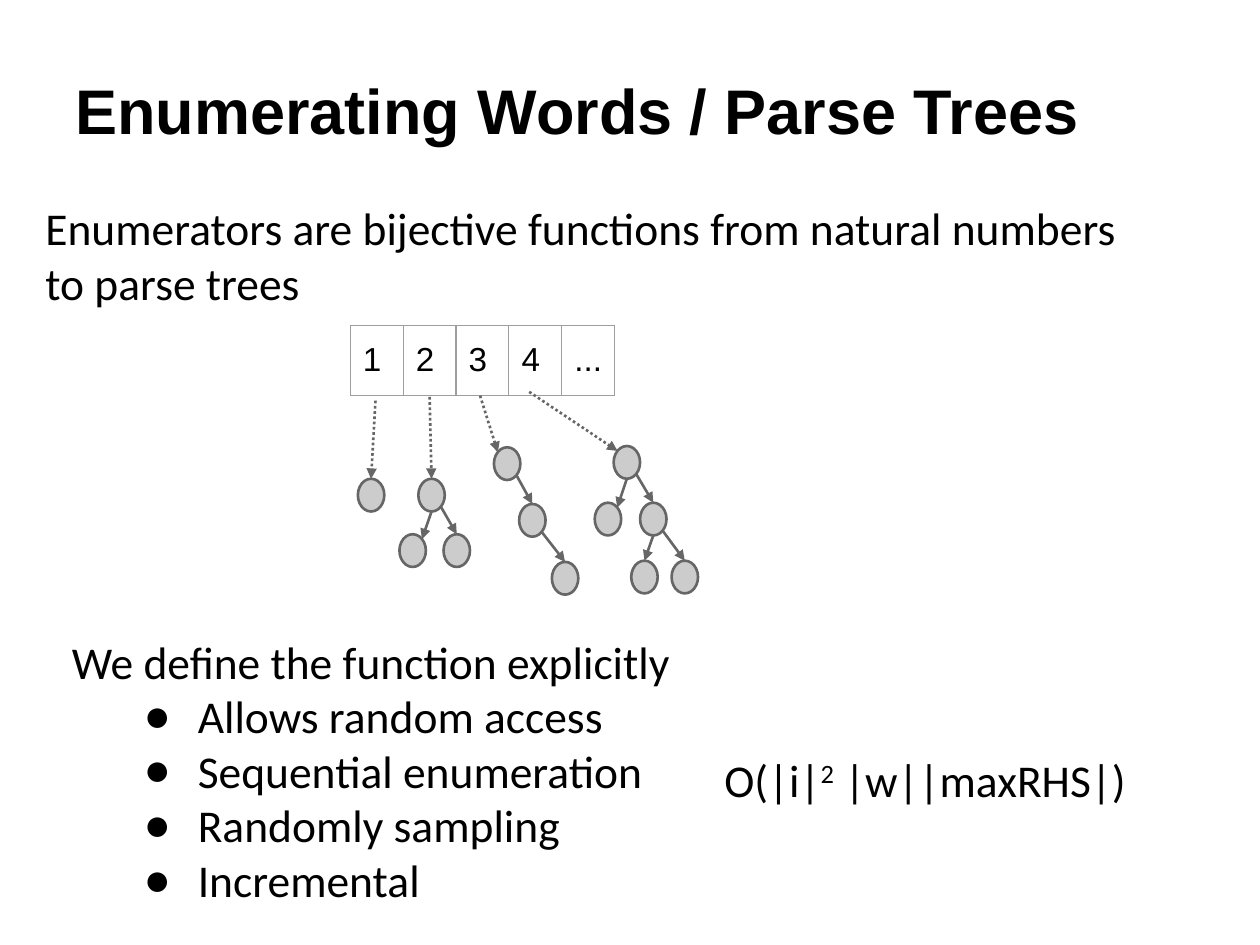
from dataclasses import dataclass

from lxml import etree
from pptx import Presentation
from pptx.dml.color import RGBColor
from pptx.enum.dml import MSO_LINE
from pptx.enum.shapes import MSO_CONNECTOR, MSO_SHAPE
from pptx.enum.text import MSO_ANCHOR, MSO_AUTO_SIZE, PP_ALIGN
from pptx.oxml.ns import qn
from pptx.util import Inches, Pt

OVAL, STRAIGHT, DOTTED = MSO_SHAPE.OVAL, MSO_CONNECTOR.STRAIGHT, MSO_LINE.ROUND_DOT
LEFT, NO_FIT = PP_ALIGN.LEFT, MSO_AUTO_SIZE.NONE
ANCHOR_TOP, ANCHOR_MIDDLE, ANCHOR_BOTTOM = MSO_ANCHOR.TOP, MSO_ANCHOR.MIDDLE, MSO_ANCHOR.BOTTOM
TWO_CONTENT = 3
COLUMNS, ROWS = 100, 75


@dataclass(frozen=True)
class Theme:
    ink: RGBColor = RGBColor(0, 0, 0)
    node: RGBColor = RGBColor(0xCC, 0xCC, 0xCC)
    edge: RGBColor = RGBColor(0x66, 0x66, 0x66)
    border: str = "9E9E9E"
    heading_font: str = "Arial"
    body_font: str = "Calibri"
    title: int = 36
    body: int = 26
    cell: int = 19
    stroke: float = 1.5
    border_stroke: float = 0.75


@dataclass(frozen=True)
class Box:
    x: float
    y: float
    w: float
    h: float

    def emu(self):
        return [cells(v) for v in (self.x, self.y, self.w, self.h)]

    def point(self, share):
        return self.x + self.w * share[0], self.y + self.h * share[1]


THEME = Theme()
NODE_W, NODE_H = 2.1, 2.6
TOP, BOTTOM = (0.5, 0), (0.5, 1)
UPPER_LEFT, UPPER_RIGHT, LOWER_RIGHT = (0.15, 0.15), (0.85, 0.15), (0.85, 0.85)
TO_LEFT, TO_RIGHT, TO_BELOW = (BOTTOM, UPPER_RIGHT), (LOWER_RIGHT, TOP), (BOTTOM, TOP)

# Each child: offset from its parent, edge sites, own children.
LEAF = []
PAIR = [((-1.5, 4.4), TO_LEFT, LEAF), ((2, 4.4), TO_RIGHT, LEAF)]
CHAIN = [((2, 4.5), TO_RIGHT, [((2.6, 4.6), TO_RIGHT, LEAF)])]
NESTED = [
    ((-1.5, 4.5), TO_LEFT, LEAF),
    ((2.1, 4.5), TO_RIGHT, [((2.5, 4.6), TO_RIGHT, LEAF), ((-0.7, 4.6), TO_BELOW, LEAF)]),
]
# Each tree: root offset, start of its pointer, pointer site, children.
FOREST = [
    ((0.6, 12.2), (2, 6), TOP, LEAF),
    ((5.4, 12.2), (6.3, 5.7), TOP, PAIR),
    ((11.4, 9.7), (10.3, 5.6), UPPER_LEFT, CHAIN),
    ((20.9, 9.6), (14.2, 5.3), UPPER_LEFT, NESTED),
]


def cells(count):
    return Inches(count / 10)


def style_runs(paragraph, size, font, bold=False):
    for run in paragraph.runs:
        run.font.size, run.font.name, run.font.bold = Pt(size), font, bold
        run.font.color.rgb = THEME.ink


def prepare_frame(shape, box, anchor):
    shape.left, shape.top, shape.width, shape.height = box.emu()
    frame = shape.text_frame
    frame.word_wrap, frame.auto_size, frame.vertical_anchor = True, NO_FIT, anchor
    frame.margin_left = frame.margin_right = frame.margin_top = frame.margin_bottom = cells(1)
    return frame


def set_bullet(paragraph, symbol=None):
    properties = paragraph._p.get_or_add_pPr()
    properties.set("marL", str(cells(10) if symbol else 0))
    properties.set("indent", str(cells(-4.3) if symbol else 0))
    if symbol:
        etree.SubElement(properties, qn("a:buChar")).set("char", symbol)
    else:
        etree.SubElement(properties, qn("a:buNone"))


def fill_title(title, box, wording):
    frame = prepare_frame(title, box, ANCHOR_BOTTOM)
    frame.text = wording
    frame.paragraphs[0].alignment = LEFT
    style_runs(frame.paragraphs[0], THEME.title, THEME.heading_font, True)


def fill_body(body, box, lead, points=()):
    frame = prepare_frame(body, box, ANCHOR_TOP)
    frame.text = "\n".join([lead, *points])
    for index, paragraph in enumerate(frame.paragraphs):
        paragraph.space_before = Pt(0)
        set_bullet(paragraph, "●" if index else None)
        style_runs(paragraph, THEME.body, THEME.body_font)


def add_complexity(slide, box):
    frame = prepare_frame(slide.shapes.add_textbox(*box.emu()), box, ANCHOR_MIDDLE)
    formula = frame.paragraphs[0]
    for part in ("O(|i|", "2", " |w||maxRHS|)"):
        formula.add_run().text = part
    style_runs(formula, THEME.body, THEME.body_font)
    formula.runs[1].font._element.set("baseline", "30000")


def draw_borders(cell):
    properties = cell._tc.get_or_add_tcPr()
    for position, side in enumerate(("a:lnL", "a:lnR", "a:lnT", "a:lnB")):
        line = etree.Element(qn(side), w=str(Pt(THEME.border_stroke)))
        fill = etree.SubElement(line, qn("a:solidFill"))
        etree.SubElement(fill, qn("a:srgbClr")).set("val", THEME.border)
        properties.insert(position, line)


def add_numbers(slide, box, labels):
    table = slide.shapes.add_table(1, len(labels), *box.emu()).table
    table.first_row = table.horz_banding = False
    for column, label in enumerate(labels):
        table.columns[column].width = cells(box.w / len(labels))
        cell = table.cell(0, column)
        cell.text = label
        cell.fill.background()
        cell.margin_left = cell.margin_right = cells(1)
        cell.margin_top = cell.margin_bottom = cells(1.3)
        style_runs(cell.text_frame.paragraphs[0], THEME.cell, THEME.heading_font)
        draw_borders(cell)


def add_arrow(slide, start, end, dotted=False):
    arrow = slide.shapes.add_connector(STRAIGHT, *map(cells, (*start, *end)))
    arrow.line.color.rgb, arrow.line.width = THEME.edge, Pt(THEME.stroke)
    if dotted:
        arrow.line.dash_style = DOTTED
    etree.SubElement(arrow.line._get_or_add_ln(), qn("a:tailEnd")).set("type", "triangle")
    etree.SubElement(arrow._element.spPr, qn("a:effectLst"))


def add_tree(slide, root, children):
    node = slide.shapes.add_shape(OVAL, *root.emu())
    node.shadow.inherit = False
    node.fill.solid()
    node.fill.fore_color.rgb = THEME.node
    node.line.color.rgb, node.line.width = THEME.edge, Pt(THEME.stroke)
    for (dx, dy), (leave, enter), grandchildren in children:
        child = Box(root.x + dx, root.y + dy, NODE_W, NODE_H)
        add_tree(slide, child, grandchildren)
        add_arrow(slide, root.point(leave), child.point(enter))


def add_enumeration(slide, box):
    add_numbers(slide, Box(box.x, box.y, 21, 5.6), ["1", "2", "3", "4", "..."])
    for (dx, dy), (start_x, start_y), site, children in FOREST:
        root = Box(box.x + dx, box.y + dy, NODE_W, NODE_H)
        add_tree(slide, root, children)
        add_arrow(slide, (box.x + start_x, box.y + start_y), root.point(site), dotted=True)


def main():
    deck = Presentation()
    deck.slide_width, deck.slide_height = cells(COLUMNS), cells(ROWS)
    slide = deck.slides.add_slide(deck.slide_layouts[TWO_CONTENT])
    title, definition, properties = list(slide.placeholders)[:3]
    fill_title(title, Box(5, 3, 90, 9.7), "Enumerating Words / Parse Trees")
    fill_body(definition, Box(2.6, 14.9, 90, 14.4),
              "Enumerators are bijective functions from natural numbers to parse trees")
    add_enumeration(slide, Box(27.8, 25.8, 28, 21.5))
    fill_body(properties, Box(4.7, 49.3, 90, 22), "We define the function explicitly",
              ["Allows random access", "Sequential enumeration", "Randomly sampling", "Incremental"])
    add_complexity(slide, Box(56.5, 57, 36.1, 9.7))
    deck.save("out.pptx")


if __name__ == "__main__":
    main()
